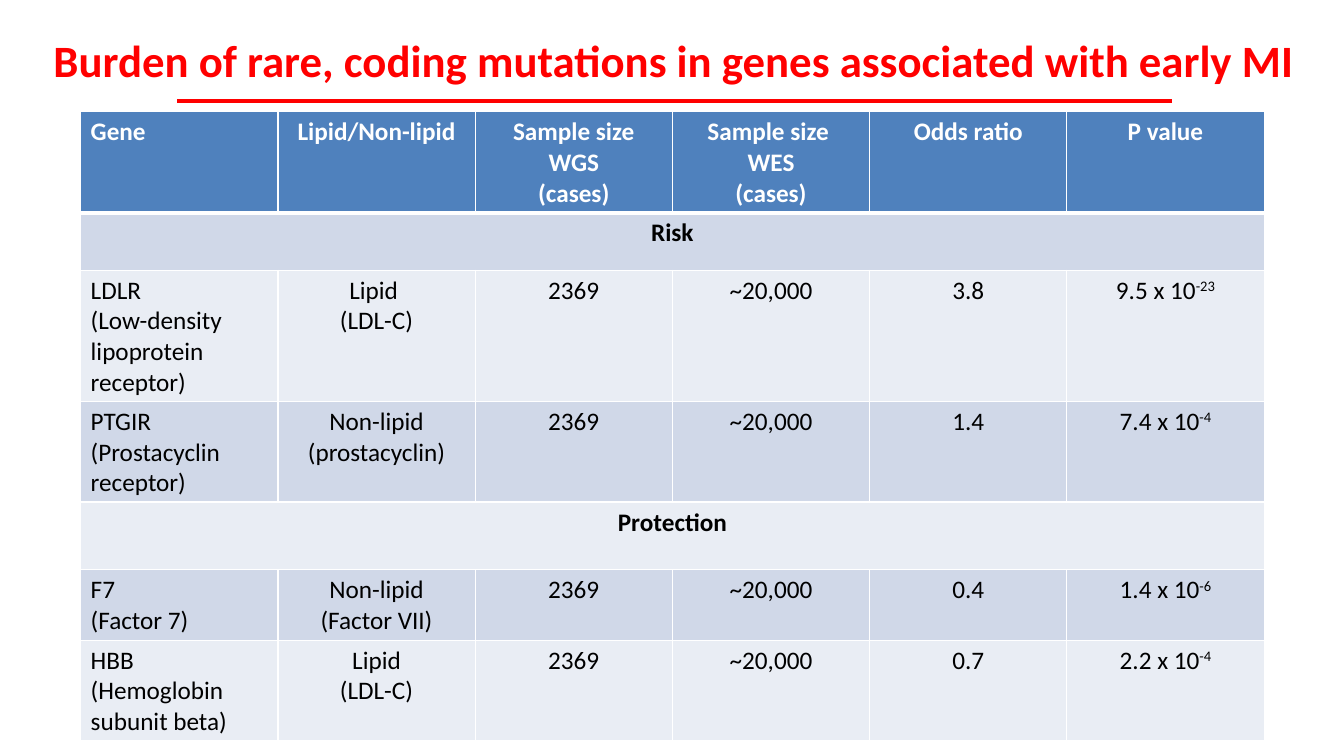
from lxml import etree
from pptx import Presentation, util as u
from pptx.dml.color import RGBColor
from pptx.enum import shapes, text
from pptx.oxml import ns

HEADER = ["Gene", "Lipid/Non-lipid", "Sample size WGS\n(cases)",
          "Sample size \nWES\n(cases)", "Odds ratio", "P value"]
SAMPLES = ["2369", "~20,000"]
# A caret marks the start of a superscript; a one-item row spans the table
ROWS = [
    HEADER,
    ["Risk"],
    ["LDLR\n(Low-density lipoprotein receptor)", "Lipid \n(LDL-C)", *SAMPLES, "3.8", "9.5 x 10^-23"],
    ["PTGIR\n(Prostacyclin receptor)", "Non-lipid (prostacyclin)", *SAMPLES, "1.4", "7.4 x 10^-4"],
    ["Protection"],
    ["F7\n(Factor 7)", "Non-lipid\n(Factor VII)", *SAMPLES, "0.4", "1.4 x 10^-6"],
    ["HBB\n(Hemoglobin subunit beta)", "Lipid\n(LDL-C)", *SAMPLES, "0.7", "2.2 x 10^-4"],
]
ROW_HEIGHTS = [0.96, 0.57, 0.96, 0.67, 0.67, 0.67, 0.67]


def color(value):
    return RGBColor.from_string(value)


class SlideBuilder:
    font = "Calibri"
    red, white, black = "FF0000", "FFFFFF", "000000"
    header_fill, bands = "4F81BD", ["E9EDF4", "D0D8E8"]

    def __init__(self, slide):
        self.slide = slide

    def add_text(self, frame, content, size, ink, bold, align):
        for index, line in enumerate(content.split("\n")):
            paragraph = frame.paragraphs[0] if index == 0 else frame.add_paragraph()
            paragraph.alignment = align
            for part, words in enumerate(line.split("^")):
                run = paragraph.add_run()
                run.text = words
                formats = {"name": self.font, "size": u.Pt(size), "bold": bold}
                for name, value in formats.items():
                    setattr(run.font, name, value)
                run.font.color.rgb = color(ink)
                if part:
                    run._r.get_or_add_rPr().set("baseline", "30000")

    def title(self, content, left, top, width, height):
        box = self.slide.shapes.add_textbox(*map(u.Inches, (left, top, width, height)))
        frame = box.text_frame
        formats = {"word_wrap": True, "vertical_anchor": text.MSO_ANCHOR.MIDDLE,
                   "margin_left": u.Inches(0.13), "margin_right": u.Inches(0.13),
                   "margin_top": u.Inches(0.07), "margin_bottom": u.Inches(0.07)}
        for name, value in formats.items():
            setattr(frame, name, value)
        self.add_text(frame, content, 32, self.red, True, text.PP_ALIGN.LEFT)

    def rule(self, start, end, y):
        line = self.slide.shapes.add_connector(
            shapes.MSO_CONNECTOR.STRAIGHT, *map(u.Inches, (start, y, end, y)))
        line.line.color.rgb = color(self.red)
        line.line.width = u.Pt(3)
        etree.SubElement(line._element.spPr, ns.qn("a:effectLst"))

    def borders(self, cell, bottom):
        properties = cell._tc.get_or_add_tcPr()
        for side, width in {"L": 1, "R": 1, "T": 1, "B": bottom}.items():
            edge = etree.SubElement(properties, ns.qn("a:ln" + side), w=str(u.Pt(width)))
            fill = etree.SubElement(edge, ns.qn("a:solidFill"))
            etree.SubElement(fill, ns.qn("a:srgbClr"), val=self.white)

    def table(self, rows, heights, left, top, width):
        columns = len(rows[0])
        table = self.slide.shapes.add_table(
            len(rows), columns, *map(u.Inches, (left, top, width, sum(heights)))).table
        for row, height in zip(table.rows, heights):
            row.height = u.Inches(height)
        for number, values in enumerate(rows):
            header, section = number == 0, len(values) == 1
            for column in range(columns):
                cell = table.cell(number, column)
                self.borders(cell, 3 if header else 1)
                cell.fill.solid()
                cell.fill.fore_color.rgb = color(
                    self.header_fill if header else self.bands[number % 2])
            if section:
                table.cell(number, 0).merge(table.cell(number, columns - 1))
            for column, content in enumerate(values):
                left_aligned = column == 0 and not section
                self.add_text(table.cell(number, column).text_frame, content, 18,
                              self.white if header else self.black, header or section,
                              text.PP_ALIGN.LEFT if left_aligned else text.PP_ALIGN.CENTER)


def main():
    presentation = Presentation()
    presentation.slide_width = u.Inches(13.33)
    presentation.slide_height = u.Inches(7.5)
    builder = SlideBuilder(presentation.slides.add_slide(presentation.slide_layouts[6]))

    # Heading with its underline
    builder.title("Burden of rare, coding mutations in genes associated with early MI",
                  0.4, -0.01, 13.25, 1.21)
    builder.rule(1.76, 11.62, 1)

    # Gene table
    builder.table(ROWS, ROW_HEIGHTS, 0.8, 1.11, 11.74)

    presentation.save("out.pptx")


if __name__ == "__main__":
    main()
